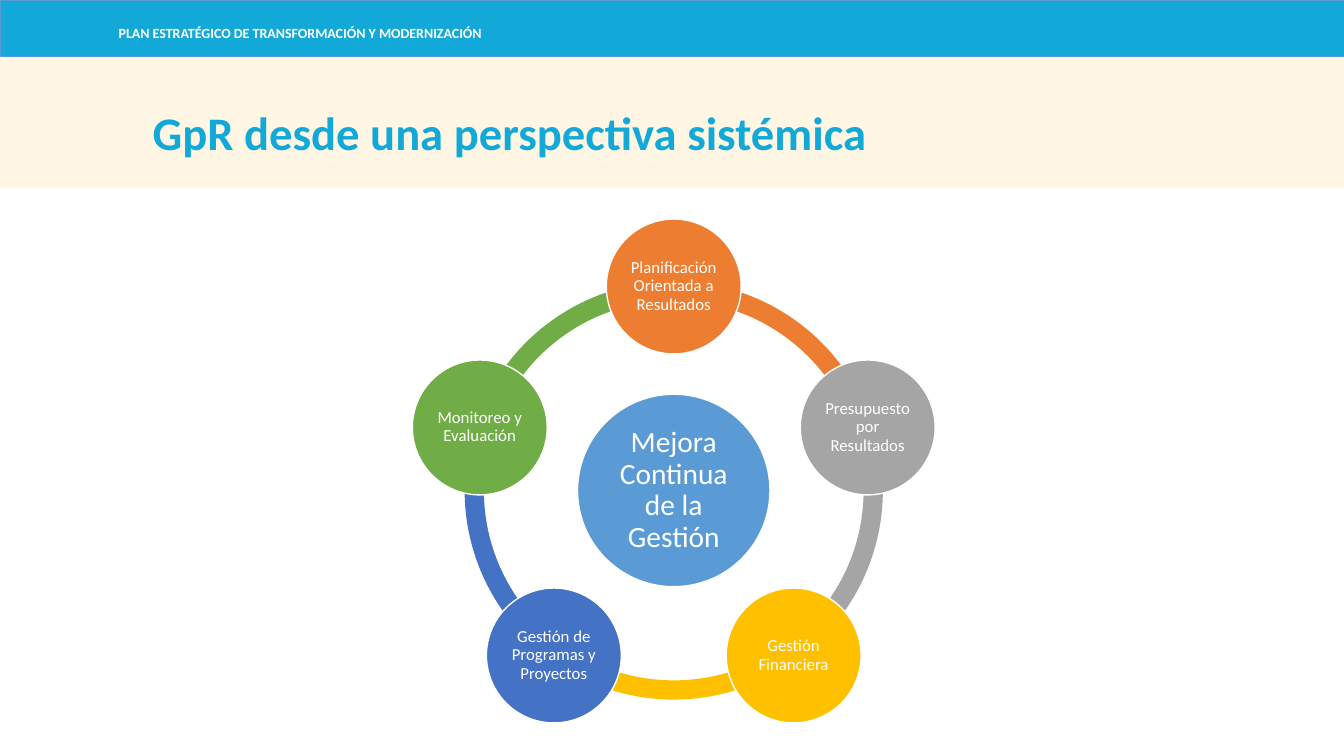
import math

from lxml import etree
from pptx import Presentation
from pptx import util as u
from pptx.dml.color import RGBColor
from pptx.enum import shapes, text
from pptx.oxml.ns import qn

COLORS = {
    "cyan": "12A9D9", "cream": "FFF2CC", "white": "FFFFFF", "blue": "5B9BD5",
    "orange": "ED7D31", "gray": "A5A5A5", "gold": "FFC000",
    "navy": "4472C4", "green": "70AD47",
}
STAGES = [
    ("Planificación Orientada a Resultados", "orange"),
    ("Presupuesto por Resultados", "gray"),
    ("Gestión Financiera", "gold"),
    ("Gestión de Programas y Proyectos", "navy"),
    ("Monitoreo y Evaluación", "green"),
]
SHAPE = shapes.MSO_SHAPE
NODE_SIZE, HUB_SIZE, ORBIT_RADIUS = 3.4, 4.85, 5.14


def rgb(name):
    return RGBColor.from_string(COLORS[name])


def write(box, words, size, color="white", bold=False, align=text.PP_ALIGN.CENTER,
          anchor=text.MSO_ANCHOR.MIDDLE, spacing=0.9, inset=None):
    frame = box.text_frame
    frame.word_wrap = True
    frame.vertical_anchor = anchor
    if inset is not None:
        frame.margin_left = frame.margin_right = u.Cm(inset)
        frame.margin_top = frame.margin_bottom = u.Cm(inset)
    para = frame.paragraphs[0]
    para.alignment = align
    para.line_spacing = spacing
    span = para.add_run()
    span.text = words
    span.font.name = "Calibri"
    span.font.size = u.Pt(size)
    span.font.bold = bold
    span.font.color.rgb = rgb(color)


def add_filled(page, kind, left, top, width, height, fill, line=None, line_width=1):
    shape = page.shapes.add_shape(kind, u.Cm(left), u.Cm(top), u.Cm(width), u.Cm(height))
    shape.shadow.inherit = False
    shape.fill.solid()
    shape.fill.fore_color.rgb = rgb(fill)
    if line:
        shape.line.color.rgb = rgb(line)
        shape.line.width = u.Pt(line_width)
    else:
        shape.line.fill.background()
    return shape


def add_text_box(page, left, top, width, height, words, size, **style):
    box = page.shapes.add_textbox(u.Cm(left), u.Cm(top), u.Cm(width), u.Cm(height))
    write(box, words, size, **style)


def add_circle(page, center_x, center_y, size, fill, words, font_size, inset):
    circle = add_filled(page, SHAPE.OVAL, center_x - size / 2, center_y - size / 2,
                        size, size, fill, line="white")
    write(circle, words, font_size, inset=inset)


def add_header(page, left, top, width, height):
    add_filled(page, SHAPE.RECTANGLE, left, top, width, height, "cyan", "blue", 0.5)
    add_text_box(page, left + 2.74, top + 0.58, 9.9, 0.56,
                 "PLAN ESTRATÉGICO DE TRANSFORMACIÓN Y MODERNIZACIÓN", 10, bold=True,
                 align=text.PP_ALIGN.LEFT, anchor=text.MSO_ANCHOR.TOP, spacing=0.8)


def add_title_band(page, left, top, width, height):
    band = add_filled(page, SHAPE.RECTANGLE, left, top, width, height, "cream")
    color = band.fill._xPr.find(qn("a:solidFill"))[0]
    etree.SubElement(color, qn("a:alpha"), val="54000")
    add_text_box(page, left + 3.05, top + 1.02, 19.6, 1.73,
                 "GpR desde una perspectiva sistémica", 33.3, color="cyan", bold=True,
                 anchor=text.MSO_ANCHOR.BOTTOM)


def add_cycle(page, left, top, size):
    """Ring of arcs around a hub, with one circle where each arc starts."""
    center_x, center_y = left + size / 2, top + size / 2
    step = 360 / len(STAGES)
    angles = [(270 + step * i) % 360 for i in range(len(STAGES))]
    for angle, (_, color) in zip(angles, STAGES):
        arc = add_filled(page, SHAPE.BLOCK_ARC, left, top, size, size, color)
        # Angles are stored in 60000ths of a degree, adjustments in 100000ths
        arc.adjustments[0] = angle * 0.6
        arc.adjustments[1] = (angle + step) % 360 * 0.6
        arc.adjustments[2] = 0.046
    add_circle(page, center_x, center_y, HUB_SIZE, "blue",
               "Mejora Continua de la Gestión", 21, 0.08)
    for angle, (words, color) in zip(angles, STAGES):
        turn = math.radians(angle)
        add_circle(page, center_x + ORBIT_RADIUS * math.cos(turn),
                   center_y + ORBIT_RADIUS * math.sin(turn),
                   NODE_SIZE, color, words, 12, 0.05)


def main():
    deck = Presentation()
    deck.slide_width, deck.slide_height = u.Cm(33.87), u.Cm(19.05)
    page = deck.slides.add_slide(deck.slide_layouts[6])
    add_title_band(page, 0, 1.42, 33.87, 3.33)
    add_header(page, 0, 0, 33.87, 1.42)
    add_cycle(page, 11.71, 7.09, 10.54)
    deck.save("out.pptx")


if __name__ == "__main__":
    main()
